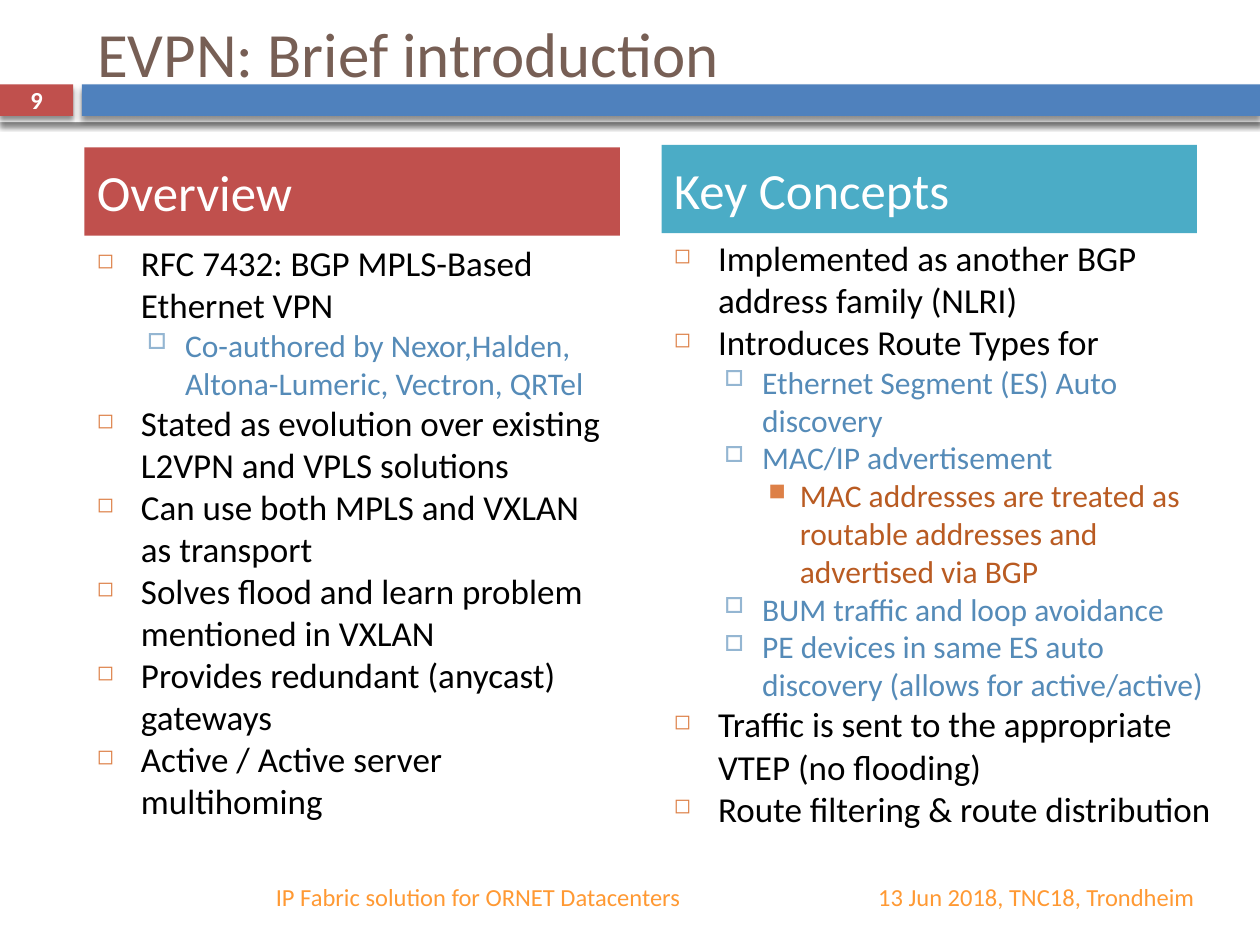
from lxml import etree
from pptx import Presentation
from pptx.dml.color import RGBColor
from pptx.enum.shapes import MSO_SHAPE
from pptx.enum.text import MSO_ANCHOR, MSO_AUTO_SIZE, PP_ALIGN
from pptx.oxml import parse_xml
from pptx.oxml.ns import qn
from pptx.util import Inches, Pt

RECT = MSO_SHAPE.RECTANGLE
TOP, MID = MSO_ANCHOR.TOP, MSO_ANCHOR.MIDDLE
LEFT, MIDDLE, RIGHT = PP_ALIGN.LEFT, PP_ALIGN.CENTER, PP_ALIGN.RIGHT
NO_FIT = MSO_AUTO_SIZE.NONE
RED, BLUE, TEAL, WHITE = "C0504D", "4F81BD", "4BACC6", "FFFFFF"
ORANGE = "FF9933"
SHADOW = (
    '<a:effectLst xmlns:a="http://schemas.openxmlformats.org/drawingml/2006/main">'
    '<a:outerShdw blurRad="38100" dist="30480" dir="5400000" rotWithShape="0">'
    '<a:srgbClr val="000000"><a:alpha val="45000"/></a:srgbClr>'
    "</a:outerShdw></a:effectLst>"
)

# Level: indent, hanging, bullet, bullet colour, bullet size %, text size, text colour
LEVELS = [
    (0.35, 0.35, "◻", "DD8047", 60, 20, "000000"),
    (0.7, 0.3, "□", "94B6D2", 70, 18, "558BB8"),
    (1, 0.25, "■", "DD8047", 75, 18, "B95B22"),
]


def rgb(code):
    return RGBColor.from_string(code)


def write(par, text, size, color, bold=False):
    run = par.add_run()
    run.text = text
    font = run.font
    font.name, font.size, font.bold = "Calibri", Pt(size), bold
    font.color.rgb = rgb(color)


prs = Presentation()
prs.slide_width, prs.slide_height = Inches(10), Inches(7.5)
slide = prs.slides.add_slide(prs.slide_layouts[5])
shapes = slide.shapes

# Header bands
for x, y, w, h, color in [
    (0, 0.62, 10, 0.35, WHITE),
    (0, 0.67, 0.58, 0.25, RED),
    (0.65, 0.67, 9.35, 0.25, BLUE),
]:
    band = shapes.add_shape(RECT, Inches(x), Inches(y), Inches(w), Inches(h))
    band.fill.solid()
    band.fill.fore_color.rgb = rgb(color)
    band.line.fill.background()
    band._element.spPr.append(parse_xml(SHADOW))

# Title, in front of the bands
title = shapes.title
title.left, title.top = Inches(0.67), Inches(0)
title.width, title.height = Inches(8.92), Inches(0.83)
frame = title.text_frame
frame.auto_size, frame.vertical_anchor = NO_FIT, MID
frame.paragraphs[0].alignment = LEFT
write(frame.paragraphs[0], "EVPN: Brief introduction", 36, "775F55")
shapes._spTree.append(title._element)

# Page number and footers
for x, y, w, h, align, text, color, bold in [
    (0, 0.66, 0.58, 0.27, MIDDLE, "9", WHITE, True),
    (1.44, 6.92, 4.06, 0.4, RIGHT, "IP Fabric solution for ORNET Datacenters", ORANGE, False),
    (5.75, 6.92, 3.83, 0.4, RIGHT, "13 Jun 2018, TNC18, Trondheim", ORANGE, False),
]:
    box = shapes.add_textbox(Inches(x), Inches(y), Inches(w), Inches(h))
    frame = box.text_frame
    frame.word_wrap, frame.vertical_anchor = True, MID
    frame.paragraphs[0].alignment = align
    write(frame.paragraphs[0], text, 14, color, bold)

# Two columns: heading, then bullets as (level, text)
overview = [
    (0, "RFC 7432: BGP MPLS-Based Ethernet VPN"),
    (1, "Co-authored by Nexor,Halden, Altona-Lumeric, Vectron, QRTel"),
    (0, "Stated as evolution over existing L2VPN and VPLS solutions"),
    (0, "Can use both MPLS and VXLAN as transport"),
    (0, "Solves flood and learn problem mentioned in VXLAN"),
    (0, "Provides redundant (anycast) gateways"),
    (0, "Active / Active server multihoming"),
]
concepts = [
    (0, "Implemented as another BGP address family (NLRI)"),
    (0, "Introduces Route Types for"),
    (1, "Ethernet Segment (ES) Auto discovery"),
    (1, "MAC/IP advertisement"),
    (2, "MAC addresses are treated as routable addresses and advertised via BGP"),
    (1, "BUM traffic and loop avoidance"),
    (1, "PE devices in same ES auto discovery (allows for active/active)"),
    (0, "Traffic is sent to the appropriate VTEP (no flooding)"),
    (0, "Route filtering & route distribution"),
]
for x, y, body, width, name, color, items in [
    (0.67, 1.17, 1.87, 4.25, "Overview", RED, overview),
    (5.25, 1.15, 1.83, 4.48, "Key Concepts", TEAL, concepts),
]:
    head = shapes.add_shape(RECT, Inches(x), Inches(y), Inches(4.25), Inches(0.7))
    head.shadow.inherit = False
    head.fill.solid()
    head.fill.fore_color.rgb = rgb(color)
    head.line.fill.background()
    frame = head.text_frame
    frame.vertical_anchor = MID
    frame.paragraphs[0].alignment = LEFT
    write(frame.paragraphs[0], name, 29, WHITE)

    box = shapes.add_textbox(Inches(x), Inches(body), Inches(width), Inches(4.8))
    frame = box.text_frame
    frame.word_wrap, frame.vertical_anchor = True, TOP
    for i, (level, text) in enumerate(items):
        par = frame.add_paragraph() if i else frame.paragraphs[0]
        indent, hang, mark, tint, scale, size, ink = LEVELS[level]
        par.level = level
        props = par._p.get_or_add_pPr()
        props.set("marL", str(Inches(indent)))
        props.set("indent", str(-Inches(hang)))
        shade = etree.SubElement(props, qn("a:buClr"))
        etree.SubElement(shade, qn("a:srgbClr"), val=tint)
        etree.SubElement(props, qn("a:buSzPct"), val=str(scale * 1000))
        etree.SubElement(props, qn("a:buChar"), char=mark)
        write(par, text, size, ink)

prs.save("out.pptx")
